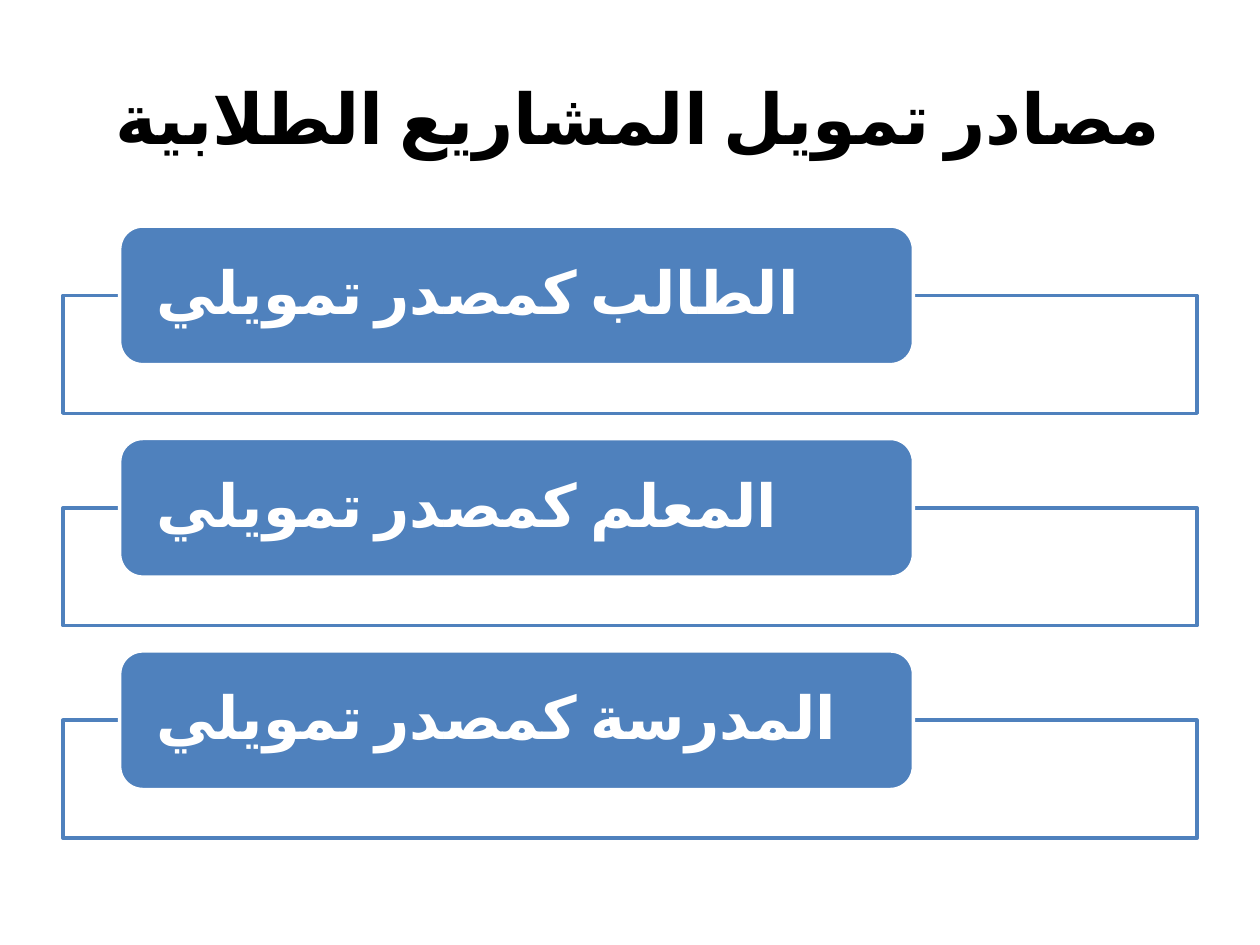
from lxml import etree
from pptx import Presentation
from pptx.dml.color import RGBColor
from pptx.enum.shapes import MSO_SHAPE
from pptx.enum.text import MSO_ANCHOR, PP_ALIGN
from pptx.oxml.ns import qn
from pptx.util import Pt

RECTANGLE = MSO_SHAPE.RECTANGLE
ROUNDED = MSO_SHAPE.ROUNDED_RECTANGLE
MIDDLE = MSO_ANCHOR.MIDDLE
LEFT, CENTER = PP_ALIGN.LEFT, PP_ALIGN.CENTER

TITLE = "مصادر تمويل المشاريع الطلابية "
SOURCES = ["الطالب كمصدر تمويلي", "المعلم كمصدر تمويلي", "المدرسة كمصدر تمويلي"]

FONT, LANGUAGE = "Calibri", "ar-SA"
BLUE, WHITE, BLACK = "4F81BD", "FFFFFF", "000000"

MARGIN, CONTENT_WIDTH = 36, 648
FIRST_TOP, ROW_PITCH = 129.2, 121.4
LABEL_INDENT, LABEL_WIDTH, LABEL_HEIGHT = 32.4, 453.6, 79.2
LABEL_INSET = 17.28
FRAME_HEIGHT = 67.4


def color(hex_value):
    return RGBColor.from_string(hex_value)


def add_box(shapes, kind, left, top, width, height, fill, line):
    shape = shapes.add_shape(kind, Pt(left), Pt(top), Pt(width), Pt(height))
    shape.shadow.inherit = False
    shape.fill.solid()
    shape.fill.fore_color.rgb = color(fill)
    shape.line.color.rgb = color(line)
    shape.line.width = Pt(2)
    return shape


def set_opacity(shape, percent):
    fill_color = shape._element.spPr.find(qn("a:solidFill"))[0]
    etree.SubElement(fill_color, qn("a:alpha")).set("val", str(percent * 1000))


def write_arabic(text_frame, text, size, text_color, alignment):
    """Write one bold right-to-left paragraph, vertically centred."""
    text_frame.word_wrap = True
    text_frame.vertical_anchor = MIDDLE
    paragraph = text_frame.paragraphs[0]
    paragraph.alignment = alignment
    paragraph._p.get_or_add_pPr().set("rtl", "1")
    run = paragraph.add_run()
    run.text = text
    run.font.name = FONT
    run.font.size = Pt(size)
    run.font.bold = True
    run.font.color.rgb = color(text_color)
    properties = run._r.get_or_add_rPr()
    properties.set("lang", LANGUAGE)
    etree.SubElement(properties, qn("a:cs")).set("typeface", FONT)
    return paragraph


def add_source(shapes, text, top):
    """Add a frame whose top edge passes behind the middle of its label."""
    frame = add_box(shapes, RECTANGLE, MARGIN, top + LABEL_HEIGHT / 2,
                    CONTENT_WIDTH, FRAME_HEIGHT, WHITE, BLUE)
    set_opacity(frame, 90)
    label = add_box(shapes, ROUNDED, MARGIN + LABEL_INDENT, top,
                    LABEL_WIDTH, LABEL_HEIGHT, BLUE, WHITE)
    text_frame = label.text_frame
    text_frame.margin_left = text_frame.margin_right = Pt(LABEL_INSET)
    text_frame.margin_top = text_frame.margin_bottom = 0
    write_arabic(text_frame, text, 34, WHITE, LEFT).line_spacing = 0.9


def main():
    presentation = Presentation()
    presentation.slide_width, presentation.slide_height = Pt(720), Pt(540)
    slide = presentation.slides.add_slide(presentation.slide_layouts[5])

    title = slide.shapes.title
    title.left, title.top = Pt(MARGIN), Pt(21.6)
    title.width, title.height = Pt(CONTENT_WIDTH), Pt(90)
    write_arabic(title.text_frame, TITLE, 40, BLACK, CENTER)

    for row, text in enumerate(SOURCES):
        add_source(slide.shapes, text, FIRST_TOP + row * ROW_PITCH)

    presentation.save("out.pptx")


if __name__ == "__main__":
    main()
